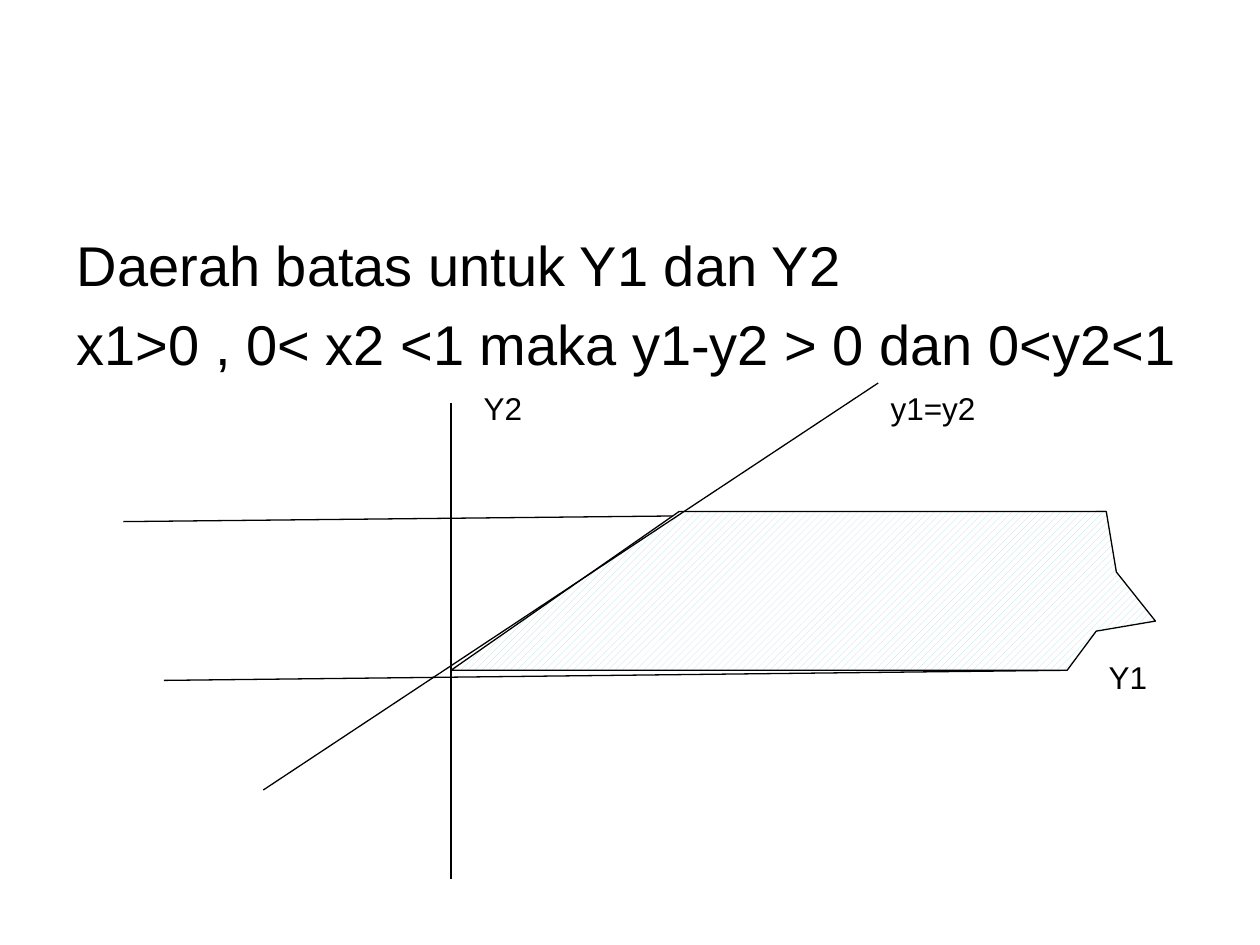
from pptx import Presentation
from pptx.dml.color import RGBColor
from pptx.enum.dml import MSO_PATTERN
from pptx.enum.shapes import MSO_CONNECTOR
from pptx.enum.text import MSO_ANCHOR, MSO_AUTO_SIZE
from pptx.oxml.ns import qn
from pptx.util import Inches, Pt

STRAIGHT = MSO_CONNECTOR.STRAIGHT
HATCH = MSO_PATTERN.WIDE_UPWARD_DIAGONAL
TOP = MSO_ANCHOR.TOP
NO_FIT = MSO_AUTO_SIZE.NONE
COLORS = {"ink": "000000", "hatch": "BBE0E3", "paper": "FFFFFF"}
FONT = "Arial"
AXIS_X, BASE_Y, LIMIT_Y = 3.58, 5.32, 4.06
BASE_END, LIMIT_END = 8.47, 8.78
LABEL_TOP, LABEL_HEIGHT = 3.04, 0.4


def color(name):
    """Return a named colour."""
    return RGBColor.from_string(COLORS[name])


def place(box, left, top, width, height):
    """Set the position and size of a box in inches."""
    box.left, box.top = Inches(left), Inches(top)
    box.width, box.height = Inches(width), Inches(height)


def style_text(frame, size):
    """Format every run in a text frame."""
    for para in frame.paragraphs:
        for span in para.runs:
            span.font.name = FONT
            span.font.size = Pt(size)
            span.font.color.rgb = color("ink")


def style_line(line):
    """Apply the thin black outline."""
    line.color.rgb = color("ink")
    line.width = Pt(0.75)


def add_statement(page, lines):
    """Fill the body placeholder with unbulleted lines."""
    body = page.placeholders[1]
    place(body, 0.51, 1.78, 9, 4.95)
    frame = body.text_frame
    frame.text = "\n".join(lines)
    frame.word_wrap = True
    frame.auto_size = NO_FIT
    frame.vertical_anchor = TOP
    for index, para in enumerate(frame.paragraphs):
        properties = para._p.get_or_add_pPr()
        properties.set("marL", str(Inches(0.38)))
        properties.set("indent", str(-Inches(0.38)))
        properties.append(properties.makeelement(qn("a:buNone"), {}))
        para.space_before = Pt(6.4 if index else 0)
    style_text(frame, 32)


def add_label(page, text, left, top, width):
    """Add a small label to the graph."""
    box = page.shapes.add_textbox(
        Inches(left), Inches(top), Inches(width), Inches(LABEL_HEIGHT))
    box.text_frame.text = text
    box.text_frame.word_wrap = True
    style_text(box.text_frame, 18)


def add_line(page, start, end):
    """Draw a straight line between two points in inches."""
    line = page.shapes.add_connector(
        STRAIGHT, *(Inches(length) for length in (*start, *end)))
    style_line(line.line)
    properties = line._element.spPr
    properties.append(properties.makeelement(qn("a:effectLst"), {}))


def add_region(page, points):
    """Draw the hatched region enclosed by the points in inches."""
    corners = [(Inches(x), Inches(y)) for x, y in points]
    builder = page.shapes.build_freeform(*corners[0])
    builder.add_line_segments(corners[1:], close=True)
    region = builder.convert_to_shape()
    region.shadow.inherit = False
    region.fill.patterned()
    region.fill.pattern = HATCH
    region.fill.fore_color.rgb = color("hatch")
    region.fill.back_color.rgb = color("paper")
    style_line(region.line)


def main():
    """Build the slide with the bounds of Y1 and Y2."""
    deck = Presentation()
    deck.slide_width, deck.slide_height = Inches(10), Inches(7.5)
    page = deck.slides.add_slide(deck.slide_layouts[1])
    title = page.shapes.title._element
    title.getparent().remove(title)

    add_statement(page, ["Daerah batas untuk Y1 dan Y2",
                         "x1>0 , 0< x2 <1 maka y1-y2 > 0 dan 0<y2<1"])
    add_line(page, (1.3, 5.4), (BASE_END, BASE_Y))
    add_line(page, (AXIS_X, 3.2), (AXIS_X, 6.98))
    add_label(page, "Y1", 8.7, 5.17, 0.63)
    add_label(page, "Y2", 3.74, LABEL_TOP, 0.87)
    add_label(page, "y1=y2", 6.97, LABEL_TOP, 1.5)
    add_line(page, (0.98, 4.14), (LIMIT_END, LIMIT_Y))
    add_region(page, [(AXIS_X, BASE_Y), (5.39, LIMIT_Y), (LIMIT_END, LIMIT_Y),
                      (8.86, 4.54), (9.17, 4.93), (8.7, 5.01),
                      (BASE_END, BASE_Y)])
    add_line(page, (2.09, 6.27), (6.97, LABEL_TOP))
    deck.save("out.pptx")


if __name__ == "__main__":
    main()
